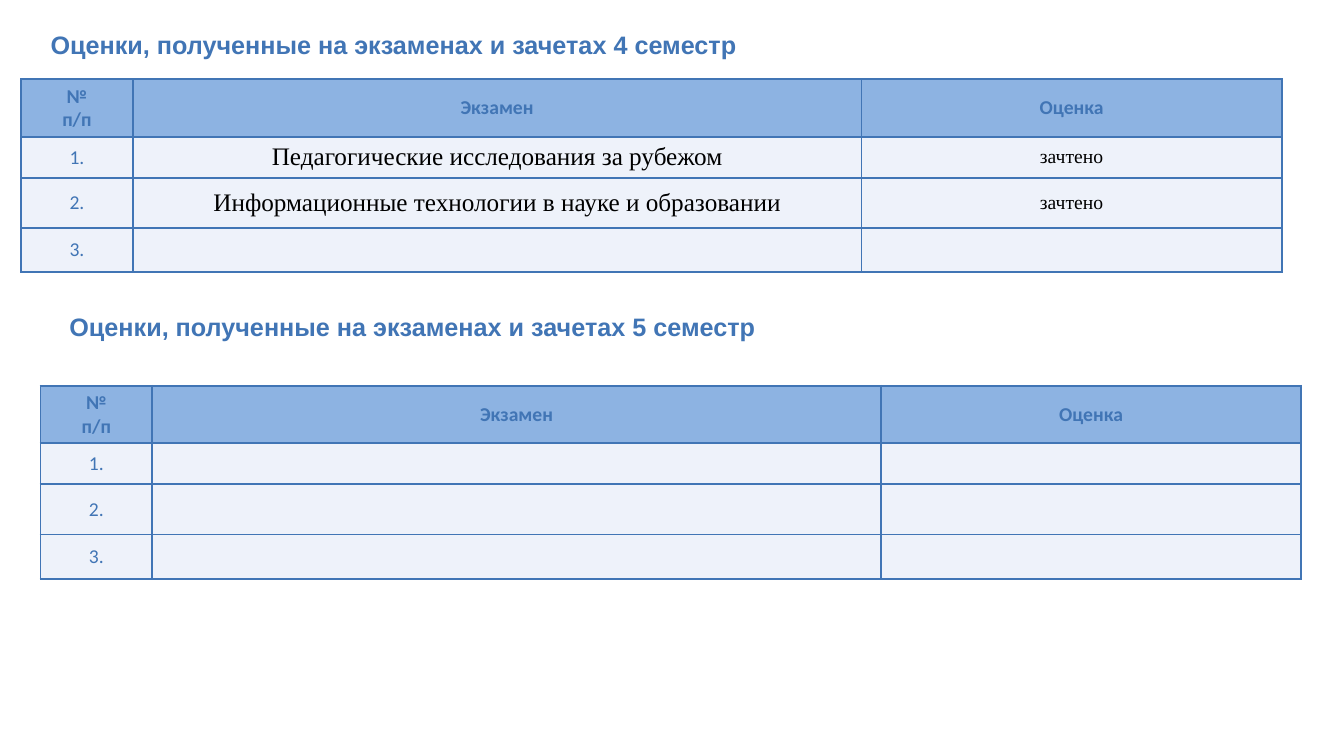
from lxml import etree
from pptx import Presentation
from pptx.dml.color import RGBColor
from pptx.enum.text import MSO_ANCHOR, MSO_AUTO_SIZE, PP_ALIGN
from pptx.oxml.ns import qn
from pptx.util import Cm, Pt

LEFT, CENTER = PP_ALIGN.LEFT, PP_ALIGN.CENTER
TOP, MIDDLE = MSO_ANCHOR.TOP, MSO_ANCHOR.MIDDLE
FIT_SHAPE = MSO_AUTO_SIZE.SHAPE_TO_FIT_TEXT

BLUE, HEADER_FILL, BODY_FILL, BLACK = "4175B5", "8DB3E2", "EEF2FA", "000000"
COLUMN_WIDTHS = [2.82, 18.36, 10.59]
ROW_HEIGHTS = [1.45, 1.03, 1.27, 1.11]
HEADER = ["№\nп/п", "Экзамен", "Оценка"]


def format_text(text_frame, font_name, size, color, bold, alignment):
    for paragraph in text_frame.paragraphs:
        paragraph.alignment = alignment
        font = paragraph.font
        font.name, font.size, font.bold = font_name, Pt(size), bold
        font.color.rgb = RGBColor.from_string(color)


def add_borders(cell, color, width):
    properties = cell._tc.get_or_add_tcPr()
    for side in ("a:lnL", "a:lnR", "a:lnT", "a:lnB"):
        line = etree.SubElement(properties, qn(side), w=str(Pt(width)))
        fill = etree.SubElement(line, qn("a:solidFill"))
        etree.SubElement(fill, qn("a:srgbClr"), val=color)


presentation = Presentation()
presentation.slide_width, presentation.slide_height = Cm(33.87), Cm(19.05)
slide = presentation.slides.add_slide(presentation.slide_layouts[5])

# Each semester: number, heading box, table corner, passed courses
semesters = [
    (4, (1.02, 0.61, 22.94, 1.02), (0.53, 2.0), [
        ("Педагогические исследования за рубежом", "зачтено"),
        ("Информационные технологии в науке и образовании", "зачтено"),
    ]),
    (5, (1.5, 7.72, 19.15, 1.02), (1.02, 9.72), []),
]

for number, heading_box, table_corner, courses in semesters:
    # Heading: the title placeholder first, then a text box
    left, top, width, height = map(Cm, heading_box)
    if number == 4:
        heading = slide.shapes.title
        heading.left, heading.top = left, top
        heading.width, heading.height = width, height
    else:
        heading = slide.shapes.add_textbox(left, top, width, height)
    text_frame = heading.text_frame
    text_frame.text = f"Оценки, полученные на экзаменах и зачетах {number} семестр"
    text_frame.word_wrap = True
    text_frame.auto_size = FIT_SHAPE
    text_frame.vertical_anchor = TOP
    format_text(text_frame, "Arial", 18, BLUE, True, LEFT)

    # Table grid
    left, top = map(Cm, table_corner)
    table = slide.shapes.add_table(
        len(ROW_HEIGHTS), len(COLUMN_WIDTHS), left, top,
        Cm(sum(COLUMN_WIDTHS)), Cm(sum(ROW_HEIGHTS))).table
    for column, column_width in zip(table.columns, COLUMN_WIDTHS):
        column.width = Cm(column_width)
    for row, row_height in zip(table.rows, ROW_HEIGHTS):
        row.height = Cm(row_height)

    # Table cells
    rows = [HEADER]
    for index in range(1, len(ROW_HEIGHTS)):
        course = courses[index - 1] if index <= len(courses) else ("", "")
        rows.append([f"{index}.", *course])
    for row_index, row_texts in enumerate(rows):
        is_header = row_index == 0
        for column_index, text in enumerate(row_texts):
            cell = table.cell(row_index, column_index)
            add_borders(cell, BLUE, 1.5)
            cell.fill.solid()
            cell.fill.fore_color.rgb = RGBColor.from_string(
                HEADER_FILL if is_header else BODY_FILL)
            cell.vertical_anchor = MIDDLE
            if not text:
                continue
            cell.text = text
            if is_header or column_index == 0:
                format_text(cell.text_frame, "Calibri", 14, BLUE, is_header, CENTER)
            else:
                size = 18 if column_index == 1 else 14
                format_text(cell.text_frame, "Times New Roman", size, BLACK, False, CENTER)

presentation.save("out.pptx")
